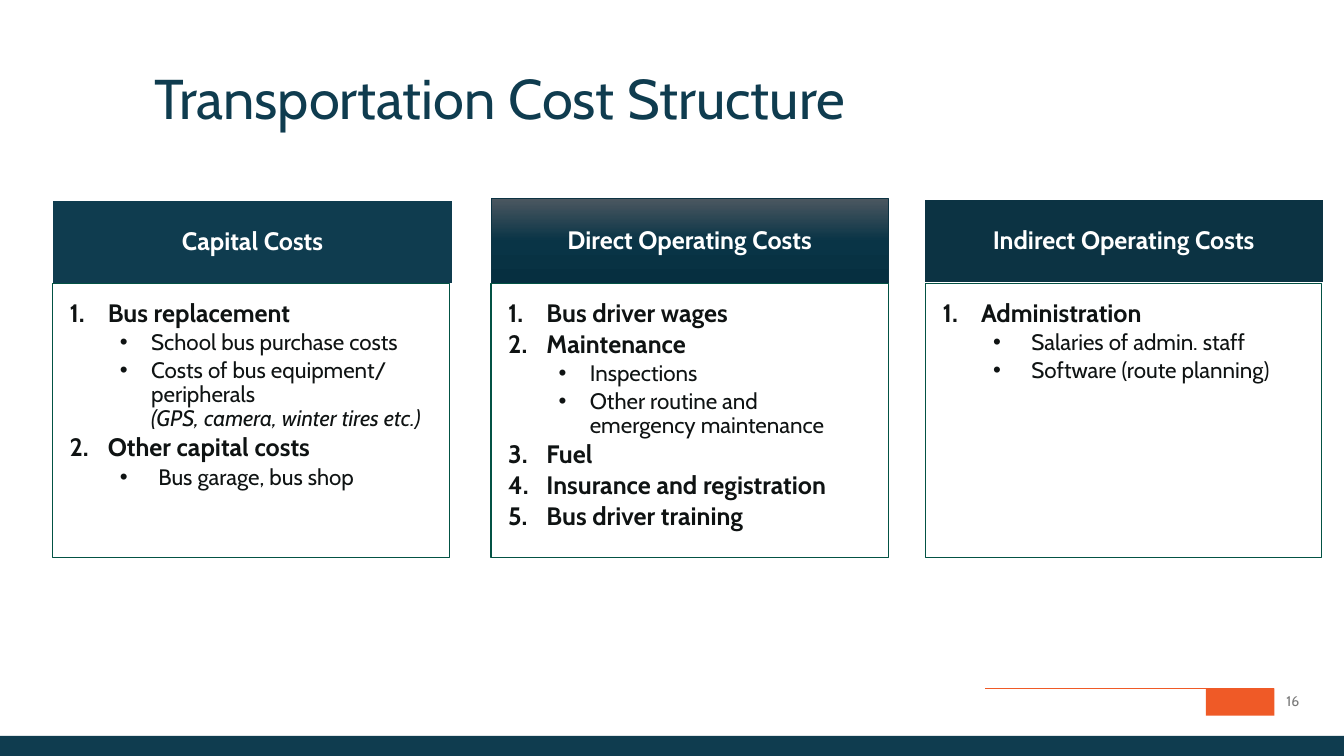
from dataclasses import dataclass

from lxml import etree
from pptx import Presentation
from pptx.dml.color import RGBColor
from pptx.enum.shapes import MSO_CONNECTOR, MSO_SHAPE
from pptx.enum.text import MSO_ANCHOR, MSO_AUTO_SIZE, PP_ALIGN
from pptx.oxml.ns import qn
from pptx.util import Inches, Pt

RECT = MSO_SHAPE.RECTANGLE
STRAIGHT = MSO_CONNECTOR.STRAIGHT
TOP, MIDDLE = MSO_ANCHOR.TOP, MSO_ANCHOR.MIDDLE
LEFT, CENTER = PP_ALIGN.LEFT, PP_ALIGN.CENTER
NO_AUTOFIT = MSO_AUTO_SIZE.NONE
COMPARISON_LAYOUT = 4


@dataclass(frozen=True)
class Theme:
    font: str = "Cabin"
    navy: str = "0F3C4F"
    dark_navy: str = "0C3343"
    header_gradient: tuple = ((0, "4B5760"), (50, "093446"), (100, "062F40"))
    green: str = "035244"
    orange: str = "EF5A27"
    ink: str = "0F1313"
    grey: str = "797979"
    white: str = "FFFFFF"
    title_size: int = 40
    heading_size: int = 18
    detail_size: int = 16
    number_size: int = 10


THEME = Theme()


@dataclass(frozen=True)
class Box:
    left: float
    top: float
    width: float
    height: float

    def emu(self) -> tuple:
        return tuple(Inches(v) for v in (self.left, self.top, self.width, self.height))


@dataclass(frozen=True)
class Item:
    text: str
    numbered: bool = False
    indent: float = 0.81
    hanging: float = 0.31
    aside: str = ""


def heading(text: str) -> Item:
    return Item(text, numbered=True, indent=0.38, hanging=0.38)


def wide_detail(text: str) -> Item:
    return Item(text, indent=0.88, hanging=0.38)


@dataclass(frozen=True)
class CostColumn:
    title: str
    header: Box
    body: Box
    fill: str | tuple
    border: str
    border_width: float
    items: tuple


COLUMNS = (
    CostColumn("Capital Costs", Box(0.52, 1.98, 3.97, 0.84), Box(0.52, 2.81, 3.94, 2.72),
               THEME.navy, THEME.white, 1.5, (
        heading("Bus replacement"),
        Item("School bus purchase costs"),
        Item("Costs of bus equipment/ peripherals", aside="(GPS, camera, winter tires etc.)"),
        heading("Other capital costs"),
        wide_detail("Bus garage, bus shop"))),
    CostColumn("Direct Operating Costs", Box(4.87, 1.97, 3.94, 0.84), Box(4.87, 2.81, 3.94, 2.72),
               THEME.header_gradient, THEME.dark_navy, 0.5, (
        heading("Bus driver wages"),
        heading("Maintenance"),
        Item("Inspections"),
        Item("Other routine and emergency maintenance"),
        heading("Fuel"),
        heading("Insurance and registration"),
        heading("Bus driver training"))),
    CostColumn("Indirect Operating Costs", Box(9.16, 1.97, 3.97, 0.84), Box(9.18, 2.81, 3.93, 2.72),
               THEME.dark_navy, THEME.white, 1.5, (
        heading("Administration"),
        wide_detail("Salaries of admin. staff"),
        wide_detail("Software (route planning)"))),
)


def write(paragraph, text: str, *, size: float, color: str, bold: bool = False,
          italic: bool = False, align=LEFT) -> None:
    paragraph.alignment = align
    run = paragraph.add_run()
    run.text = text
    font = run.font
    font.name, font.size, font.bold, font.italic = THEME.font, Pt(size), bold, italic
    font.color.rgb = RGBColor.from_string(color)


def set_frame(shape, insets: tuple, anchor=TOP):
    """Sets insets (left, top, right, bottom) and returns the first paragraph."""
    frame = shape.text_frame
    frame.word_wrap, frame.auto_size, frame.vertical_anchor = True, NO_AUTOFIT, anchor
    (frame.margin_left, frame.margin_top,
     frame.margin_right, frame.margin_bottom) = (Inches(v) for v in insets)
    return frame.paragraphs[0]


def set_spacing(paragraph, after_percent: int) -> None:
    paragraph.line_spacing, paragraph.space_before = 0.9, Pt(0)
    after = etree.SubElement(paragraph._p.get_or_add_pPr(), qn("a:spcAft"))
    etree.SubElement(after, qn("a:spcPct"), val=str(after_percent * 1000))


def paint(shape, fill: str | tuple, border: str | None = None, width: float = 1) -> None:
    """Fills with one colour, or with a top-down gradient of (percent, colour) stops."""
    if isinstance(fill, str):
        shape.fill.solid()
        shape.fill.fore_color.rgb = RGBColor.from_string(fill)
    else:
        shape.fill.gradient()
        shape.fill.gradient_angle = 270
        stops = shape._element.spPr.find(".//" + qn("a:gsLst"))
        for stop in list(stops):
            stops.remove(stop)
        for percent, color in fill:
            stop = etree.SubElement(stops, qn("a:gs"), pos=str(percent * 1000))
            etree.SubElement(stop, qn("a:srgbClr"), val=color)
    if border is None:
        shape.line.fill.background()
    else:
        shape.line.color.rgb = RGBColor.from_string(border)
        shape.line.width = Pt(width)


def add_block(slide, box: Box, fill: str | tuple, border: str | None = None, width: float = 1):
    block = slide.shapes.add_shape(RECT, *box.emu())
    block.shadow.inherit = False
    paint(block, fill, border, width)
    return block


def place(placeholder, box: Box) -> None:
    placeholder.left, placeholder.top, placeholder.width, placeholder.height = box.emu()


def write_item(paragraph, item: Item) -> None:
    paragraph.level = 1 if item.numbered else 2
    set_spacing(paragraph, 15)
    props = paragraph._p.get_or_add_pPr()
    props.set("marL", str(Inches(item.indent)))
    props.set("indent", str(-Inches(item.hanging)))
    if item.numbered:
        etree.SubElement(props, qn("a:buFont"), typeface="+mj-lt")
        etree.SubElement(props, qn("a:buAutoNum"), type="arabicPeriod")
    else:
        etree.SubElement(props, qn("a:buFont"), typeface="Arial")
        etree.SubElement(props, qn("a:buChar"), char="•")
    size = THEME.heading_size if item.numbered else THEME.detail_size
    write(paragraph, item.text, size=size, color=THEME.ink, bold=item.numbered)
    if item.aside:
        paragraph.add_line_break()
        write(paragraph, item.aside, size=size, color=THEME.ink, italic=True)


def add_column(slide, column: CostColumn, cost_list) -> None:
    header = add_block(slide, column.header, column.fill, column.border, column.border_width)
    caption = set_frame(header, (0.23, 0.13, 0.23, 0.13), MIDDLE)
    set_spacing(caption, 35)
    write(caption, column.title, size=THEME.heading_size, color=THEME.white, bold=True, align=CENTER)

    place(cost_list, column.body)
    paint(cost_list, THEME.white, THEME.green)
    paragraph = set_frame(cost_list, (0.17, 0.17, 0.23, 0.26))
    for index, item in enumerate(column.items):
        write_item(paragraph if index == 0 else cost_list.text_frame.add_paragraph(), item)
    slide.shapes._spTree.append(cost_list._element)  # list border lies over the header


def add_footer(slide) -> None:
    add_block(slide, Box(11.96, 6.83, 0.68, 0.27), THEME.orange)
    rule = slide.shapes.add_connector(STRAIGHT, Inches(9.77), Inches(6.83), Inches(12.64), Inches(6.83))
    rule.line.color.rgb = RGBColor.from_string(THEME.orange)
    rule.line.width = Pt(1)
    etree.SubElement(rule._element.spPr, qn("a:effectLst"))
    add_block(slide, Box(0, 7.3, 13.33, 0.2), THEME.navy)
    page_number = slide.shapes.add_textbox(*Box(12.66, 6.82, 0.55, 0.27).emu())
    write(set_frame(page_number, (0.1, 0.05, 0.1, 0.05)), "16",
          size=THEME.number_size, color=THEME.grey)


def main() -> None:
    deck = Presentation()
    deck.slide_width, deck.slide_height = Inches(13.33), Inches(7.5)
    slide = deck.slides.add_slide(deck.slide_layouts[COMPARISON_LAYOUT])
    title, *cost_lists, spare = slide.placeholders
    spare._element.getparent().remove(spare._element)

    add_footer(slide)
    place(title, Box(1.53, 0.71, 11.06, 0.61))
    title_line = set_frame(title, (0, 0, 0, 0))
    title_line.line_spacing = 0.9
    write(title_line, "Transportation Cost Structure", size=THEME.title_size, color=THEME.navy)
    for column, cost_list in zip(COLUMNS, cost_lists):
        add_column(slide, column, cost_list)
    deck.save("out.pptx")


if __name__ == "__main__":
    main()
